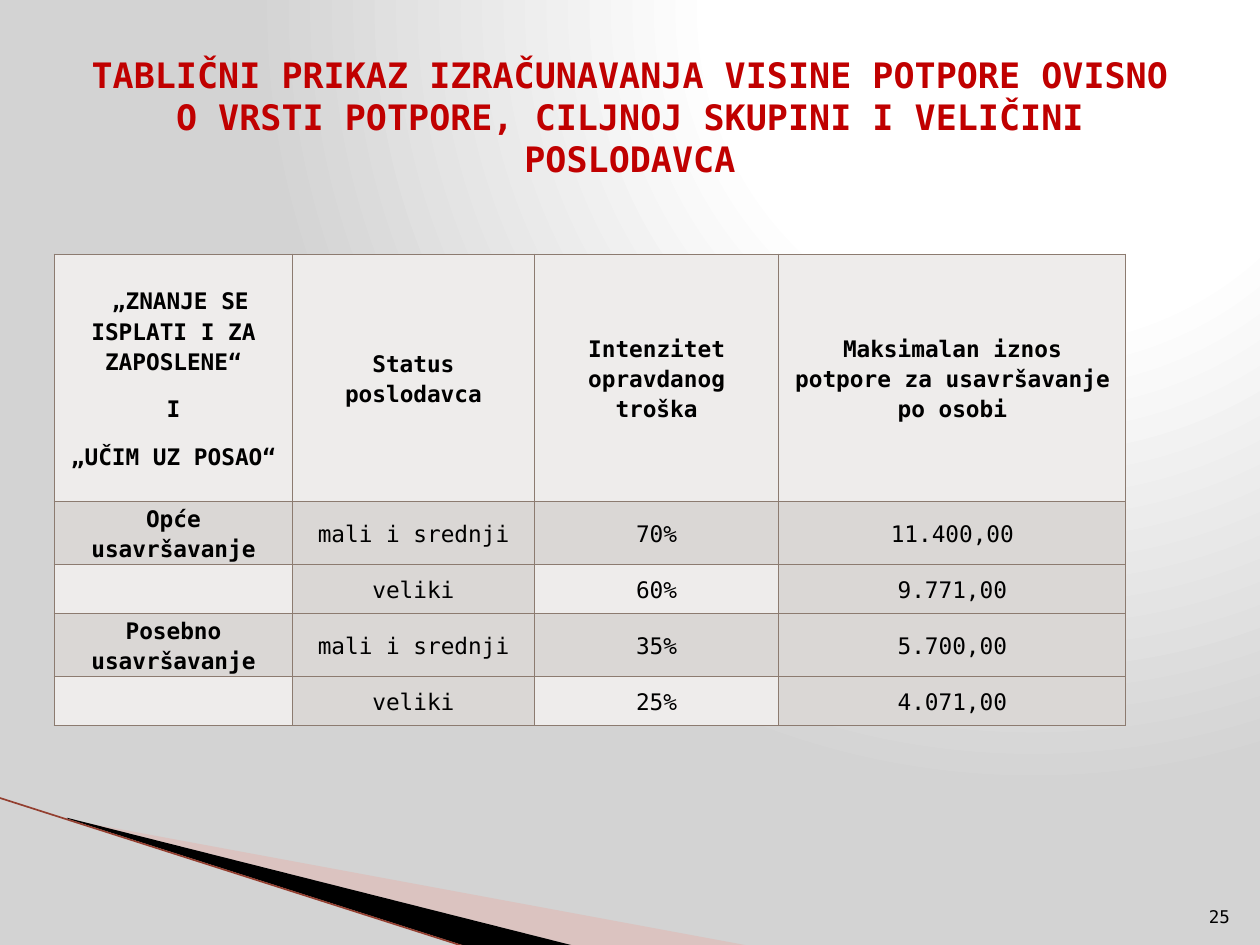
import pptx
import pptx.util
import pptx.dml.color
import pptx.enum.shapes
import pptx.enum.text
import pptx.oxml
import pptx.oxml.ns
from dataclasses import dataclass

Pt = pptx.util.Pt
RGB = pptx.dml.color.RGBColor.from_string
ALIGN = pptx.enum.text.PP_ALIGN
ANCHOR = pptx.enum.text.MSO_ANCHOR
NS = pptx.oxml.ns.nsdecls("a")


@dataclass(frozen=True)
class Theme:
    font: str = "DejaVu Sans Mono"
    title: str = "C00000"
    text: str = "000000"
    light: str = "EEECEB"
    dark: str = "DAD7D5"
    border: str = "8C7B70"
    wedge: str = "E7ACA4"
    edge: str = "933F30"
    white: str = "FFFFFF"
    gray: str = "D3D3D3"
    title_size: int = 20
    table_size: int = 13
    number_size: int = 10


theme = Theme()


def add_run(p, text, size, color, bold, align):
    p.alignment = align
    r = p.add_run()
    r.text = text
    r.font.name = theme.font
    r.font.size = Pt(size)
    r.font.bold = bold
    r.font.color.rgb = RGB(color)


def add_text(left, top, width, height, anchor, *run):
    tf = s.shapes.add_textbox(Pt(left), Pt(top), Pt(width), Pt(height)).text_frame
    tf.word_wrap = True
    tf.vertical_anchor = anchor
    add_run(tf.paragraphs[0], *run)


prs = pptx.Presentation()
prs.slide_width, prs.slide_height = Pt(720), Pt(540)
s = prs.slides.add_slide(prs.slide_layouts[6])

fill = s.background.fill
fill.solid()
fill.fore_color.rgb = RGB(theme.gray)
bg_pr = s.background._cSld.bg.bgPr
stops = "".join(
    f'<a:gs pos="{pos * 1000}"><a:srgbClr val="{color}"/></a:gs>'
    for pos, color in ((0, theme.white), (40, theme.white), (100, theme.gray))
)
bg_pr.replace(bg_pr[0], pptx.oxml.parse_xml(
    f'<a:gradFill {NS} rotWithShape="1"><a:gsLst>{stops}</a:gsLst>'
    '<a:path path="circle"><a:fillToRect l="65000" t="0" r="0" b="98000"/></a:path></a:gradFill>'
))

wedges = (
    (theme.wedge, 40, ((39.6, 468.5), (428.4, 540.5), (328.3, 540.5), (39.6, 468))),
    (theme.text, 100, ((38.2, 467.3), (329, 540.7), (267.8, 541.2), (38.9, 468))),
)
for color, alpha, points in wedges:
    points = [(Pt(x), Pt(y)) for x, y in points]
    fb = s.shapes.build_freeform(*points[0])
    fb.add_line_segments(points[1:])
    sp = fb.convert_to_shape()
    sp.shadow.inherit = False
    sp.line.fill.background()
    sp.fill.solid()
    sp.fill.fore_color.rgb = RGB(color)
    if alpha < 100:
        clr = sp._element.spPr.find(".//" + pptx.oxml.ns.qn("a:srgbClr"))
        clr.append(pptx.oxml.parse_xml(f'<a:alpha {NS} val="{alpha * 1000}"/>'))

edge = s.shapes.add_connector(
    pptx.enum.shapes.MSO_CONNECTOR.STRAIGHT, Pt(-0.7), Pt(455.8), Pt(267.1), Pt(541.4)
)
edge.line.color.rgb = RGB(theme.edge)
edge.line.width = Pt(0.95)
edge._element.spPr.append(pptx.oxml.parse_xml(f"<a:effectLst {NS}/>"))

add_text(
    36, 21.6, 648, 90, ANCHOR.MIDDLE,
    "TABLIČNI PRIKAZ IZRAČUNAVANJA VISINE POTPORE OVISNO O VRSTI POTPORE, "
    "CILJNOJ SKUPINI I VELIČINI POSLODAVCA",
    theme.title_size, theme.title, True, ALIGN.CENTER,
)
add_text(
    681.1, 504.7, 28.8, 28.8, ANCHOR.BOTTOM,
    "25", theme.number_size, theme.text, False, ALIGN.RIGHT,
)

rows = (
    (" „ZNANJE SE ISPLATI I ZA ZAPOSLENE“\nI\n„UČIM UZ POSAO“", "Status poslodavca",
     "Intenzitet opravdanog troška", "Maksimalan iznos potpore za usavršavanje po osobi"),
    ("Opće usavršavanje", "mali i srednji", "70%", "11.400,00"),
    ("", "veliki", "60%", "9.771,00"),
    ("Posebno usavršavanje", "mali i srednji", "35%", "5.700,00"),
    ("", "veliki", "25%", "4.071,00"),
)
widths = (136.1, 138.2, 139.7, 198.3)
heights = (141.1, 36, 28.1, 36, 28.1)
tbl = s.shapes.add_table(
    len(rows), len(widths), Pt(31), Pt(145.4), Pt(sum(widths)), Pt(sum(heights))
).table
tbl.first_row = tbl.horz_banding = False
for col, width in zip(tbl.columns, widths):
    col.width = Pt(width)
for row, height in zip(tbl.rows, heights):
    row.height = Pt(height)

for i, row in enumerate(rows):
    for j, text in enumerate(row):
        cell = tbl.cell(i, j)
        cell.margin_left = cell.margin_right = Pt(7.2)
        cell.margin_top = cell.margin_bottom = 0
        cell.vertical_anchor = ANCHOR.MIDDLE
        is_dark = i % 2 == 1 or (i > 0 and j % 2 == 1)
        cell.fill.solid()
        cell.fill.fore_color.rgb = RGB(theme.dark if is_dark else theme.light)
        tc_pr = cell._tc.get_or_add_tcPr()
        for k, side in enumerate("LRTB"):
            tc_pr.insert(k, pptx.oxml.parse_xml(
                f'<a:ln{side} {NS} w="12700"><a:solidFill>'
                f'<a:srgbClr val="{theme.border}"/></a:solidFill></a:ln{side}>'
            ))
        tf = cell.text_frame
        for k, line in enumerate(text.split("\n") if text else ()):
            p = tf.add_paragraph() if k else tf.paragraphs[0]
            p.line_spacing = 1.15
            p.space_after = Pt(10)
            add_run(p, line, theme.table_size, theme.text, i == 0 or j == 0, ALIGN.CENTER)

prs.save("out.pptx")
